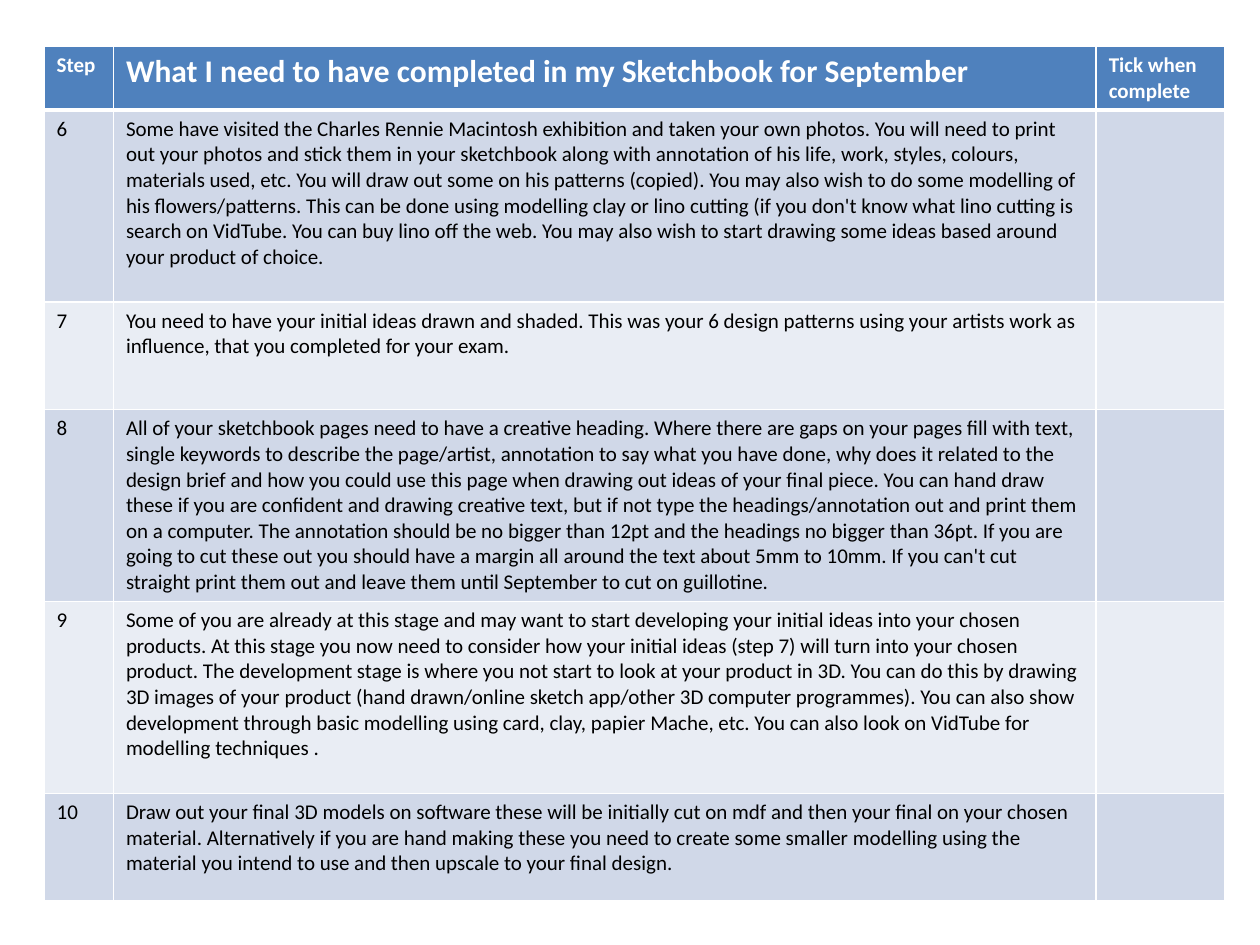
from dataclasses import dataclass

from lxml import etree
from pptx import Presentation
from pptx import util as u
from pptx.dml.color import RGBColor
from pptx.oxml import ns


@dataclass(frozen=True)
class Theme:
    font: str = "Calibri"
    body_size: int = 12
    title_size: int = 18
    header: str = "4F81BD"
    bands: tuple = ("D0D8E8", "E9EDF4")
    light: str = "FFFFFF"
    dark: str = "000000"
    thin: int = 1
    thick: int = 3


THEME = Theme()
WIDTH, HEIGHT = u.Inches(10), u.Inches(7.5)
LEFT, TOP = 0.035, 0.049  # shares of the slide
COLUMNS = (0.055, 0.78, 0.102)  # shares of the slide width
HEADER_ROW, SHORT_ROW, TALL_ROW = 0.065, 0.114, 0.203  # shares of the height

HEADINGS = (
    ("Step", THEME.body_size),
    ("What I need to have completed in my Sketchbook for September",
     THEME.title_size),
    ("Tick when complete", THEME.body_size),
)
FIRST_STEP = 6
STEPS = (
    (TALL_ROW,
     "Some have visited the Charles Rennie Macintosh exhibition and taken your "
     "own photos. You will need to print out your photos and stick them in your "
     "sketchbook along with annotation of his life, work, styles, colours, "
     "materials used, etc. You will draw out some on his patterns (copied). You "
     "may also wish to do some modelling of his flowers/patterns. This can be "
     "done using modelling clay or lino cutting (if you don't know what lino "
     "cutting is search on VidTube. You can buy lino off the web. You may also "
     "wish to start drawing some ideas based around your product of choice."),
    (SHORT_ROW,
     "You need to have your initial ideas drawn and shaded. This was your 6 "
     "design patterns using your artists work as influence, that you completed "
     "for your exam."),
    (TALL_ROW,
     "All of your sketchbook pages need to have a creative heading. Where there "
     "are gaps on your pages fill with text, single keywords to describe the "
     "page/artist, annotation to say what you have done, why does it related to "
     "the design brief and how you could use this page when drawing out ideas "
     "of your final piece. You can hand draw these if you are confident and "
     "drawing creative text, but if not type the headings/annotation out and "
     "print them on a computer. The annotation should be no bigger than 12pt "
     "and the headings no bigger than 36pt. If you are going to cut these out "
     "you should have a margin all around the text about 5mm to 10mm. If you "
     "can't cut straight print them out and leave them until September to cut "
     "on guillotine."),
    (TALL_ROW,
     "Some of you are already at this stage and may want to start developing "
     "your initial ideas into your chosen products. At this stage you now need "
     "to consider how your initial ideas (step 7) will turn into your chosen "
     "product. The development stage is where you not start to look at your "
     "product in 3D. You can do this by drawing 3D images of your product (hand "
     "drawn/online sketch app/other 3D computer programmes). You can also show "
     "development through basic modelling using card, clay, papier Mache, etc. "
     "You can also look on VidTube for modelling techniques ."),
    (SHORT_ROW,
     "Draw out your final 3D models on software these will be initially cut on "
     "mdf and then your final on your chosen material. Alternatively if you are "
     "hand making these you need to create some smaller modelling using the "
     "material you intend to use and then upscale to your final design."),
)


def set_borders(cell, top, bottom):
    """Draw light rules on all four sides; top and bottom are in points."""
    tc_pr = cell._tc.get_or_add_tcPr()
    sides = (("L", THEME.thin), ("R", THEME.thin), ("T", top), ("B", bottom))
    for side, width in sides:
        ln = etree.SubElement(tc_pr, ns.qn(f"a:ln{side}"), w=str(u.Pt(width)))
        fill = etree.SubElement(ln, ns.qn("a:solidFill"))
        etree.SubElement(fill, ns.qn("a:srgbClr"), val=THEME.light)


def style_cell(cell, fill, top=THEME.thin, bottom=THEME.thin):
    set_borders(cell, top, bottom)  # the schema wants borders before the fill
    cell.fill.solid()
    cell.fill.fore_color.rgb = RGBColor.from_string(fill)


def write_cell(cell, words, size, color, bold=False):
    p = cell.text_frame.paragraphs[0]
    p.font.size = u.Pt(size)
    if not words:
        return
    r = p.add_run()
    r.text = words
    r.font.name = THEME.font
    r.font.size = u.Pt(size)
    r.font.bold = bold
    r.font.color.rgb = RGBColor.from_string(color)


def add_grid(slide, row_shares):
    frame = slide.shapes.add_table(
        len(row_shares), len(COLUMNS), int(WIDTH * LEFT), int(HEIGHT * TOP),
        int(WIDTH * sum(COLUMNS)), int(HEIGHT * sum(row_shares)))
    table = frame.table
    for column, share in zip(table.columns, COLUMNS):
        column.width = int(WIDTH * share)
    for row, share in zip(table.rows, row_shares):
        row.height = int(HEIGHT * share)
    return table


def fill_header(table):
    for cell, (words, size) in zip(table.rows[0].cells, HEADINGS):
        style_cell(cell, THEME.header, bottom=THEME.thick)
        write_cell(cell, words, size, THEME.light, bold=True)


def fill_steps(table):
    for i, (_, task) in enumerate(STEPS):
        top = THEME.thin if i else THEME.thick
        row = (str(FIRST_STEP + i), task, "")
        for cell, words in zip(table.rows[i + 1].cells, row):
            style_cell(cell, THEME.bands[i % 2], top=top)
            write_cell(cell, words, THEME.body_size, THEME.dark)


def main():
    prs = Presentation()
    prs.slide_width, prs.slide_height = WIDTH, HEIGHT
    slide = prs.slides.add_slide(prs.slide_layouts[6])
    table = add_grid(slide, [HEADER_ROW] + [share for share, _ in STEPS])
    fill_header(table)
    fill_steps(table)
    prs.save("out.pptx")


if __name__ == "__main__":
    main()
